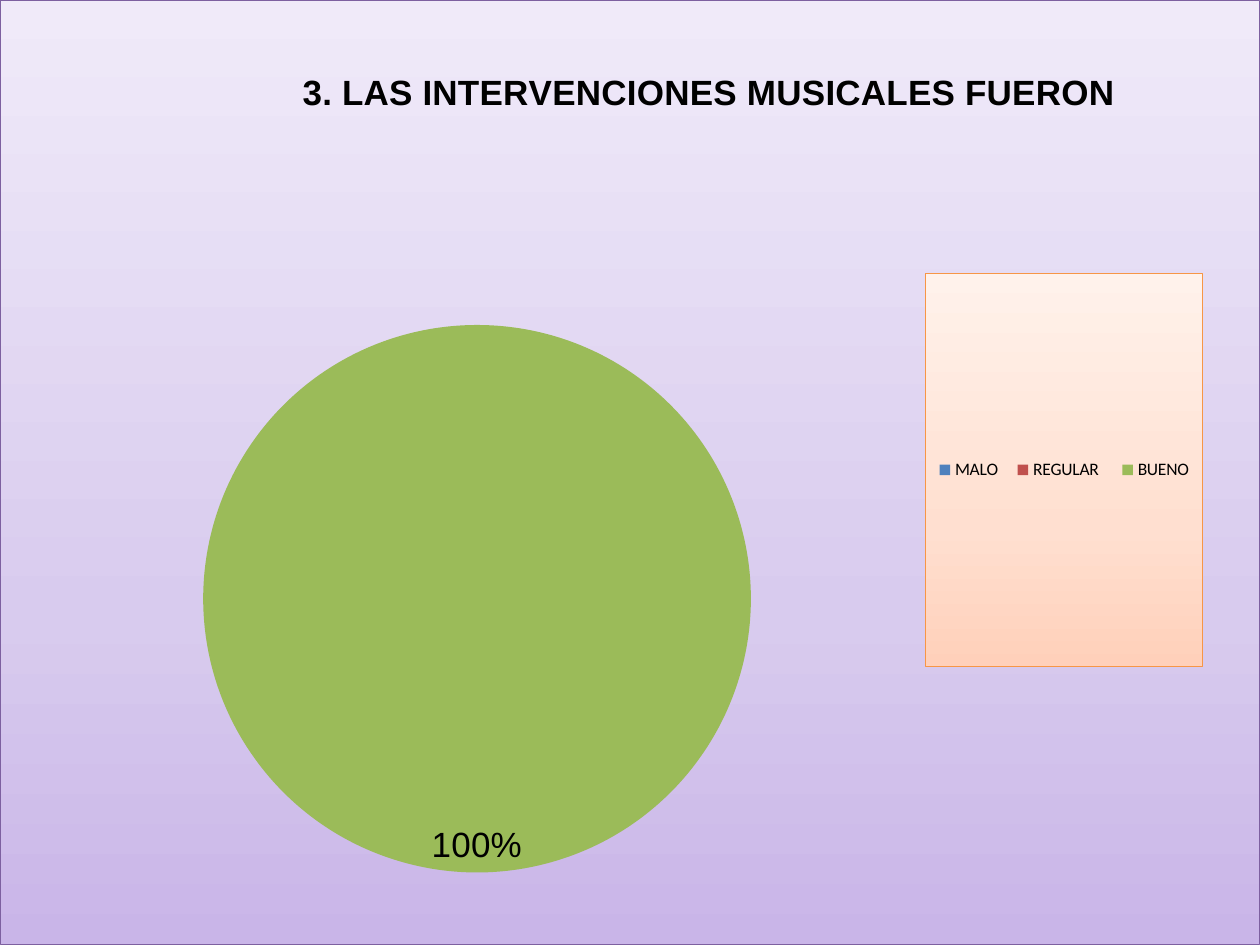
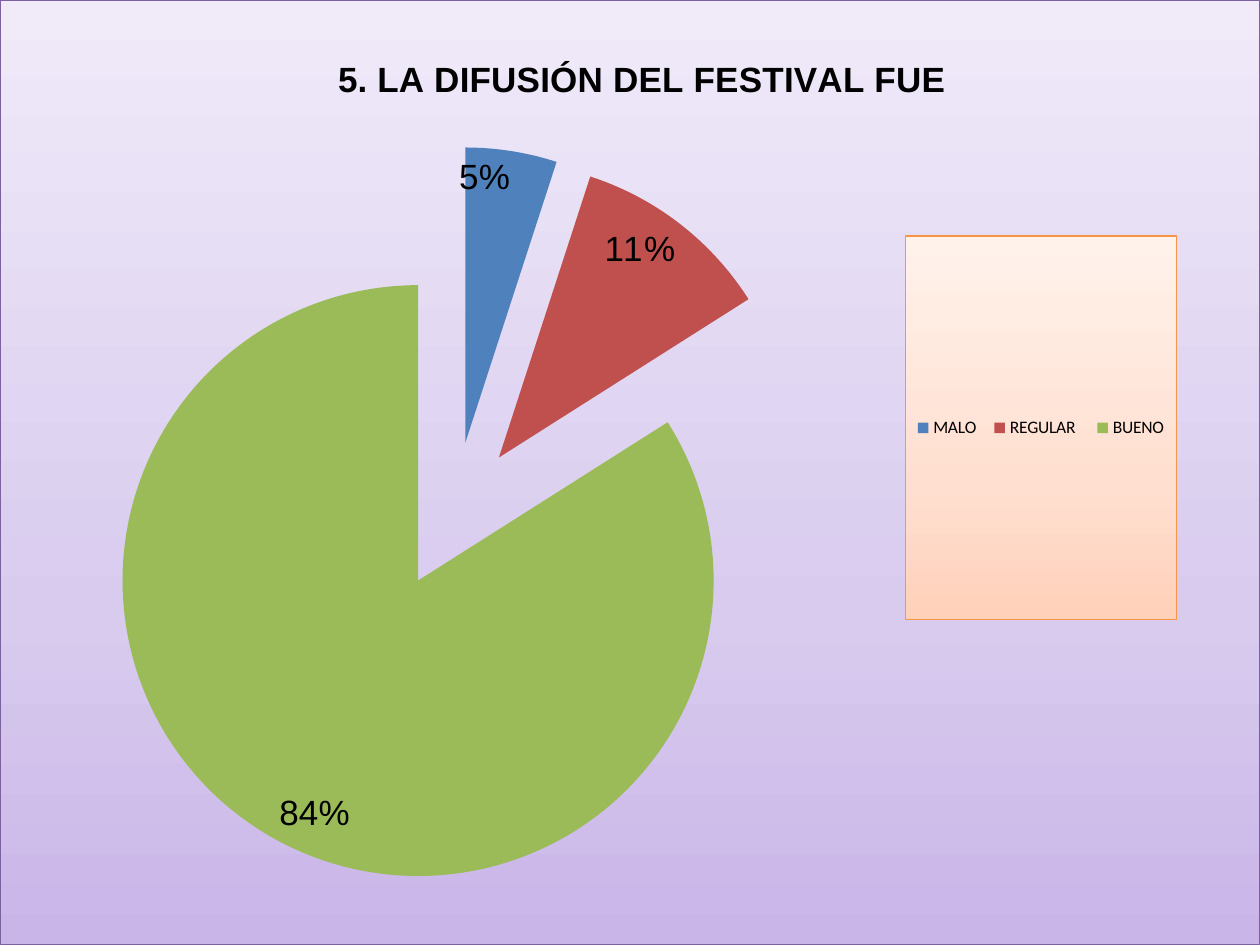
from lxml import etree
from pptx import Presentation
from pptx.chart.data import CategoryChartData
from pptx.dml.color import RGBColor
from pptx.enum.chart import XL_CHART_TYPE, XL_LABEL_POSITION, XL_LEGEND_POSITION
from pptx.oxml import parse_xml
from pptx.oxml.ns import nsdecls, qn
from pptx.util import Inches, Pt

PIE = XL_CHART_TYPE.PIE
INSIDE_END = XL_LABEL_POSITION.INSIDE_END
LEGEND_RIGHT = XL_LEGEND_POSITION.RIGHT

BLACK = RGBColor(0x00, 0x00, 0x00)
SLICE_COLORS = (
    RGBColor(0x4F, 0x81, 0xBD),
    RGBColor(0xC0, 0x50, 0x4D),
    RGBColor(0x9B, 0xBB, 0x59),
)
PURPLE_LINE = RGBColor(0x7D, 0x60, 0xA0)
PURPLE_STOPS = (
    (0, RGBColor(0xC9, 0xB5, 0xE8)),
    (35, RGBColor(0xD8, 0xCB, 0xEE)),
    (100, RGBColor(0xF0, 0xEA, 0xF9)),
)
ORANGE_LINE = RGBColor(0xF7, 0x96, 0x46)
ORANGE_STOPS = (
    (0, RGBColor(0xFF, 0xD0, 0xBA)),
    (35, RGBColor(0xFF, 0xDF, 0xD0)),
    (100, RGBColor(0xFF, 0xF2, 0xEB)),
)

HEADING_FONT = "Arial"
BASE_FONT = "Calibri"
HEADING_SIZE = Pt(20)
BASE_SIZE = Pt(10)
CATEGORIES = ("MALO", "REGULAR ", "BUENO")
EXPLOSION = 25
SLIDE_BOX = (Inches(0), Inches(0), Inches(10), Inches(7.5))

QUESTIONS = (
    {
        "title": "3. LAS INTERVENCIONES MUSICALES FUERON",
        "values": (0, 0, 100),
        "title_at": (2.35, 0.5),
        "plot_box": (0.47, 1.49, 6.63, 5.44),
        "legend_box": (7.35, 2.17, 2.2, 3.12),
    },
    {
        "title": "5. LA DIFUSIÓN DEL FESTIVAL FUE",
        "values": (5, 11, 84),
        "title_at": (2.63, 0.4),
        "plot_box": (0.01, 1.16, 7.18, 5.87),
        "legend_box": (7.19, 1.87, 2.15, 3.05),
    },
)


def gradient_properties(stops, line_color):
    """Return chart shape properties with an upward gradient and a thin border."""
    stop_xml = "".join(
        f'<a:gs pos="{position * 1000}"><a:srgbClr val="{color}"/></a:gs>'
        for position, color in stops
    )
    return parse_xml(
        f'<c:spPr {nsdecls("c", "a")}><a:gradFill><a:gsLst>{stop_xml}</a:gsLst>'
        f'<a:lin ang="16200000" scaled="1"/></a:gradFill>'
        f'<a:ln w="{Pt(0.75)}"><a:solidFill><a:srgbClr val="{line_color}"/>'
        f"</a:solidFill></a:ln></c:spPr>"
    )


def place_element(element, anchor_tag, box, chart_box, inner=False):
    """Place a chart element, in inches, relative to the chart's box."""
    for old_layout in element.findall(qn("c:layout")):
        element.remove(old_layout)
    layout = parse_xml(f'<c:layout {nsdecls("c")}><c:manualLayout/></c:layout>')
    settings = [("layoutTarget", "inner")] if inner else []
    settings += [("xMode", "edge"), ("yMode", "edge")]
    settings += [
        (name, f"{Inches(length) / scale:.4f}")
        for name, length, scale in zip("xywh", box, chart_box[2:] * 2)
    ]
    for name, value in settings:
        etree.SubElement(layout[0], qn(f"c:{name}")).set("val", value)
    element.find(qn(f"c:{anchor_tag}")).addprevious(layout)


def style_font(font, name, size):
    """Give a font its name and size in black."""
    font.name = name
    font.size = size
    font.color.rgb = BLACK


def style_title(chart, text, position, chart_box):
    """Write the question as the chart title."""
    chart.has_title = True
    title = chart.chart_title
    title.include_in_layout = False
    run = title.text_frame.paragraphs[0].add_run()
    run.text = text
    run.font.bold = True
    style_font(run.font, HEADING_FONT, HEADING_SIZE)
    element = chart.element.find(f".//{qn('c:title')}")
    place_element(element, "overlay", position, chart_box)


def style_slices(chart):
    """Colour and pull apart the slices and show their percentages."""
    plot = chart.plots[0]
    plot.vary_by_categories = True
    series = plot.series[0]
    for index, color in enumerate(SLICE_COLORS):
        fill = series.points[index].format.fill
        fill.solid()
        fill.fore_color.rgb = color
    explosion = parse_xml(f'<c:explosion {nsdecls("c")} val="{EXPLOSION}"/>')
    chart.element.find(f".//{qn('c:dPt')}").addprevious(explosion)
    labels = series.data_labels
    labels.show_percentage = True
    labels.show_value = False
    labels.number_format = "0%"
    labels.number_format_is_linked = False
    labels.position = INSIDE_END
    style_font(labels.font, HEADING_FONT, HEADING_SIZE)


def style_legend(chart, box, chart_box):
    """Put the legend in its orange panel."""
    chart.has_legend = True
    legend = chart.legend
    legend.position = LEGEND_RIGHT
    legend.include_in_layout = False
    style_font(legend.font, BASE_FONT, BASE_SIZE)
    element = chart.element.find(f".//{qn('c:legend')}")
    place_element(element, "overlay", box, chart_box)
    panel = gradient_properties(ORANGE_STOPS, ORANGE_LINE)
    element.find(qn("c:txPr")).addprevious(panel)


def add_question_slide(presentation, question, chart_box):
    """Add a slide filled by the pie chart of one survey question."""
    slide = presentation.slides.add_slide(presentation.slide_layouts[6])
    data = CategoryChartData()
    data.categories = CATEGORIES
    data.add_series("Series 1", question["values"])
    chart = slide.shapes.add_chart(PIE, *chart_box, data).chart
    style_font(chart.font, BASE_FONT, BASE_SIZE)
    background = gradient_properties(PURPLE_STOPS, PURPLE_LINE)
    chart.element.find(qn("c:txPr")).addprevious(background)
    style_title(chart, question["title"], question["title_at"], chart_box)
    style_slices(chart)
    style_legend(chart, question["legend_box"], chart_box)
    plot_area = chart.element.find(f".//{qn('c:plotArea')}")
    place_element(plot_area, "pieChart", question["plot_box"], chart_box, inner=True)


def main():
    """Build and save the survey slides."""
    presentation = Presentation()
    presentation.slide_width, presentation.slide_height = SLIDE_BOX[2:]
    for question in QUESTIONS:
        add_question_slide(presentation, question, SLIDE_BOX)
    presentation.save("out.pptx")


if __name__ == "__main__":
    main()
